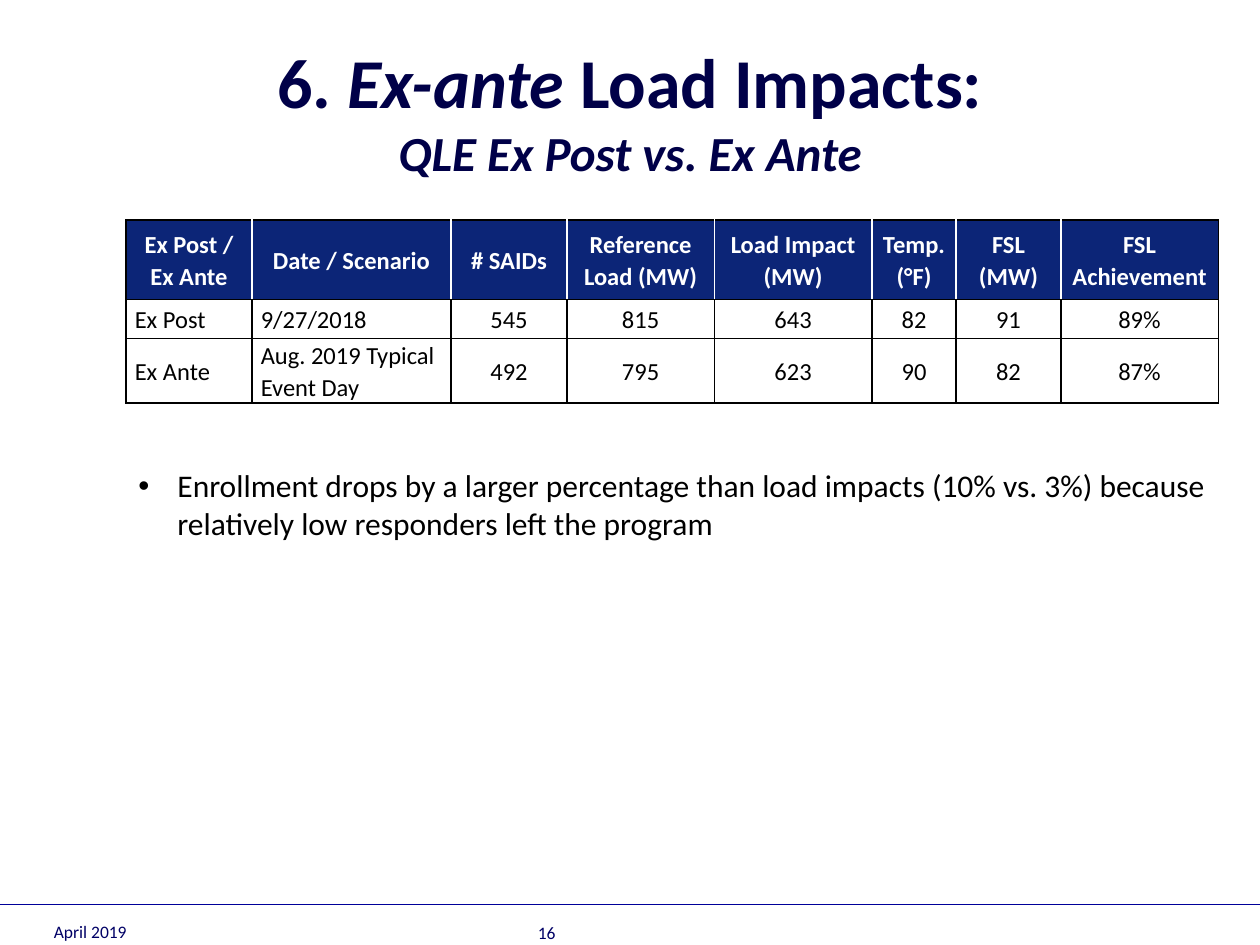
from dataclasses import dataclass

from lxml import etree
from pptx import Presentation
from pptx.dml.color import RGBColor
from pptx.enum import shapes, text
from pptx.oxml.ns import qn
from pptx.util import Emu, Inches, Pt

W, H = 10, 7.5
FONT = "Calibri"
NAVY, INK, WHITE, BLACK = "000048", "000066", "FFFFFF", "000000"
HEADER_FILL, RULE = "0C2577", "000099"
CENTER, LEFT = text.PP_ALIGN.CENTER, text.PP_ALIGN.LEFT
TOP, MIDDLE, BOTTOM = text.MSO_ANCHOR.TOP, text.MSO_ANCHOR.MIDDLE, text.MSO_ANCHOR.BOTTOM

COLUMNS = [1, 1.58, 0.92, 1.17, 1.25, 0.67, 0.83, 1.25]
ROWS = [0.63, 0.31, 0.51]
CELLS = [
    ["Ex Post / Ex Ante", "Date / Scenario", "# SAIDs", "Reference Load (MW)",
     "Load Impact (MW)", "Temp. (°F)", "FSL (MW)", "FSL Achievement"],
    ["Ex Post", "9/27/2018", "545", "815", "643", "82", "91", "89%"],
    ["Ex Ante", "Aug. 2019 Typical Event Day", "492", "795", "623", "90", "82", "87%"],
]


@dataclass
class Run:
    text: str
    size: float
    color: str
    bold: bool = False
    italic: bool = False
    break_before: bool = False


@dataclass
class Box:
    left: float
    top: float
    width: float
    height: float
    runs: list[Run]
    align: text.PP_ALIGN = LEFT
    anchor: text.MSO_ANCHOR = TOP
    bullet: bool = False


BOXES = [
    Box(0.033, 0.935, 0.233, 0.069, [Run("April 2019", 10, INK)], anchor=BOTTOM),
    Box(0.417, 0.936, 0.233, 0.069, [Run("16", 10, INK)], anchor=BOTTOM),
    Box(0.05, 0.033, 0.9, 0.167, [
        Run("6. ", 40, NAVY, True),
        Run("Ex-ante", 40, NAVY, True, True),
        Run(" Load Impacts:", 40, NAVY, True),
        Run("QLE Ex Post vs. Ex Ante", 28, NAVY, True, True, break_before=True),
    ], CENTER, MIDDLE),
    Box(0.1, 0.487, 0.867, 0.095, [
        Run("Enrollment drops by a larger percentage than load impacts (10% vs. 3%) "
            "because relatively low responders left the program", 18, BLACK),
    ], bullet=True),
]


def rgb(color: str) -> RGBColor:
    return RGBColor.from_string(color)


def across(share: float) -> Emu:
    return Inches(share * W)


def down(share: float) -> Emu:
    return Inches(share * H)


def add_run(p, run: Run) -> None:
    if run.break_before:
        p.add_line_break()
    r = p.add_run()
    r.text = run.text
    r.font.name, r.font.size = FONT, Pt(run.size)
    r.font.bold, r.font.italic = run.bold, run.italic
    r.font.color.rgb = rgb(run.color)


def add_bullet(p) -> None:
    pPr = p._p.get_or_add_pPr()
    pPr.set("marL", str(Inches(0.31)))
    pPr.set("indent", str(-Inches(0.31)))
    etree.SubElement(pPr, qn("a:buFont"), typeface="Arial")
    etree.SubElement(pPr, qn("a:buChar"), char="•")
    p.space_after = Pt(3)


def draw_box(s, box: Box) -> None:
    sp = s.shapes.add_textbox(across(box.left), down(box.top),
                              across(box.width), down(box.height))
    tf = sp.text_frame
    tf.word_wrap = True
    tf.vertical_anchor = box.anchor
    p = tf.paragraphs[0]
    p.alignment = box.align
    if box.bullet:
        add_bullet(p)
    for run in box.runs:
        add_run(p, run)


def set_borders(cell, colors: dict[str, str]) -> None:
    tcPr = cell._tc.get_or_add_tcPr()
    for i, side in enumerate("LRTB"):
        ln = etree.Element(qn(f"a:ln{side}"), w=str(Pt(1)))
        fill = etree.SubElement(ln, qn("a:solidFill"))
        etree.SubElement(fill, qn("a:srgbClr"), val=colors.get(side, BLACK))
        tcPr.insert(i, ln)


def draw_cell(cell, row: int, col: int, value: str) -> None:
    header = row == 0
    cell.margin_left = cell.margin_right = Inches(0.07)
    cell.margin_top = cell.margin_bottom = 0
    cell.vertical_anchor = MIDDLE
    p = cell.text_frame.paragraphs[0]
    p.alignment = CENTER if header or col > 1 else LEFT
    p.line_spacing = 1.07
    add_run(p, Run(value, 14, WHITE if header else BLACK, header))
    inner = {}
    if header:
        cell.fill.solid()
        cell.fill.fore_color.rgb = rgb(HEADER_FILL)
        if col > 0:
            inner["L"] = WHITE
        if col < len(COLUMNS) - 1:
            inner["R"] = WHITE
    else:
        cell.fill.background()
    set_borders(cell, inner)


def draw_table(s, left: float, top: float) -> None:
    table = s.shapes.add_table(len(ROWS), len(COLUMNS), across(left), down(top),
                               Inches(sum(COLUMNS)), Inches(sum(ROWS))).table
    table.horz_banding = False
    for column, width in zip(table.columns, COLUMNS):
        column.width = Inches(width)
    for row, height in zip(table.rows, ROWS):
        row.height = Inches(height)
    for i, values in enumerate(CELLS):
        for j, value in enumerate(values):
            draw_cell(table.cell(i, j), i, j, value)


def draw_rule(s, y: float) -> None:
    line = s.shapes.add_connector(shapes.MSO_CONNECTOR.STRAIGHT,
                                  0, down(y), across(1), down(y))
    line.line.color.rgb = rgb(RULE)
    line.line.width = Pt(0.75)
    etree.SubElement(line._element.spPr, qn("a:effectLst"))


def main() -> None:
    prs = Presentation()
    prs.slide_width, prs.slide_height = Inches(W), Inches(H)
    s = prs.slides.add_slide(prs.slide_layouts[6])
    draw_rule(s, 0.957)
    for box in BOXES:
        draw_box(s, box)
    draw_table(s, 0.1, 0.233)
    prs.save("out.pptx")


if __name__ == "__main__":
    main()
